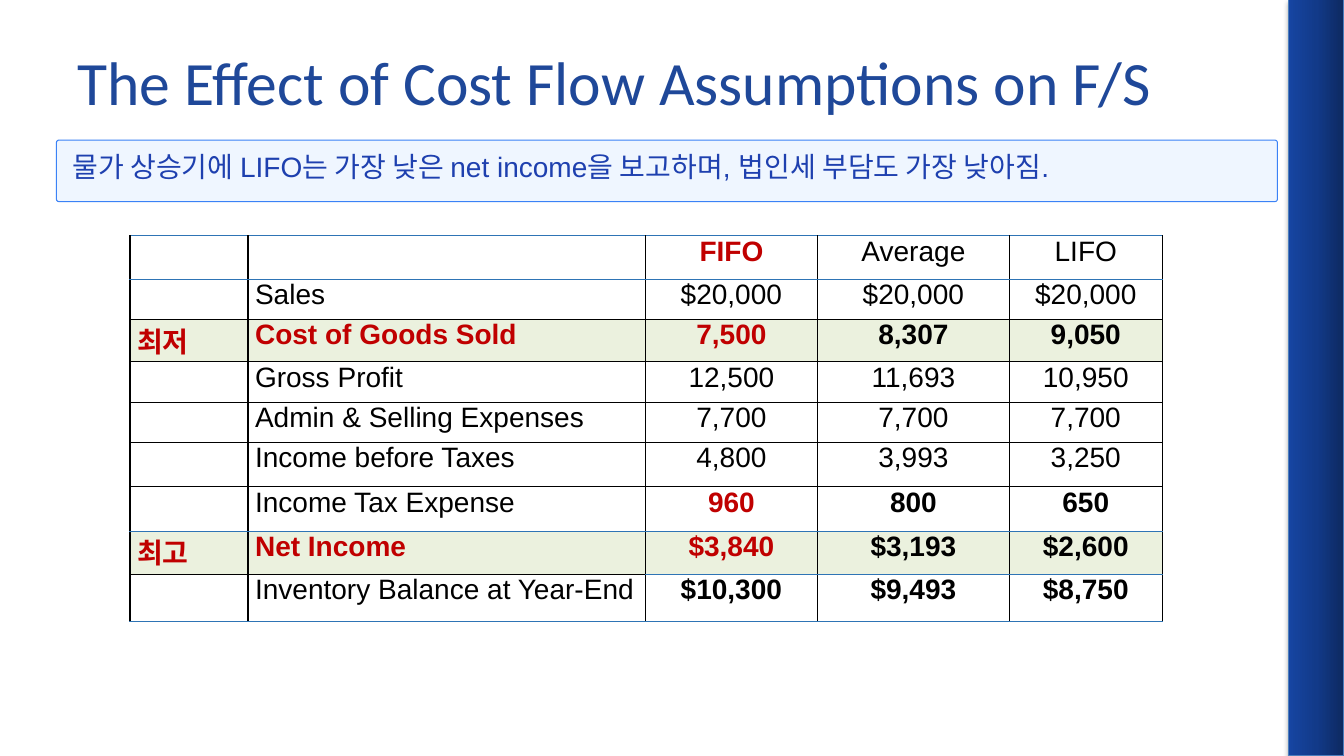
import dataclasses

import lxml.etree
import copy
import pptx
import pptx.dml.color
import pptx.enum.shapes
import pptx.enum.text
import pptx.oxml
import pptx.oxml.ns
import pptx.util

EMU_PER_PX = 9144


@dataclasses.dataclass(frozen=True)
class Theme:
    title_font: str = "Calibri"
    body_font: str = "Arial"
    title_size: int = 44
    body_size: int = 20
    title: str = "1F4899"
    note: str = "1E40AF"
    note_fill: str = "EFF6FF"
    note_line: str = "3B82F6"
    band_stops: tuple = ("0D2960", "123A89", "1645A2")
    band_line: str = "4B7EBC"
    text: str = "000000"
    emphasis: str = "C00000"
    highlight: str = "EBF1DE"
    grid: str = "000000"
    rule: str = "2E74B5"


@dataclasses.dataclass(frozen=True)
class Row:
    height: int
    texts: tuple
    bold: range = range(0)
    red: range = range(0)
    highlighted: bool = False


COLUMN_WIDTHS = (117, 394, 171, 190, 152)
AMOUNTS = range(2, 5)
FIFO = range(2, 3)
ROWS = (
    Row(43, ("", "", "FIFO", "Average", "LIFO"), FIFO, FIFO),
    Row(40, ("", "Sales", "$20,000", "$20,000", "$20,000")),
    Row(42, ("최저", "Cost of Goods Sold", "7,500", "8,307", "9,050"), range(5), range(3), True),
    Row(40, ("", "Gross Profit", "12,500", "11,693", "10,950")),
    Row(40, ("", "Admin & Selling Expenses", "7,700", "7,700", "7,700")),
    Row(44, ("", "Income before Taxes", "4,800", "3,993", "3,250")),
    Row(44, ("", "Income Tax Expense", "960", "800", "650"), AMOUNTS, FIFO),
    Row(43, ("최고", "Net Income", "$3,840", "$3,193", "$2,600"), range(5), range(3), True),
    Row(47, ("", "Inventory Balance at Year-End", "$10,300", "$9,493", "$8,750"), AMOUNTS),
)
BLUE_EDGES = (0, 1, 7, 9)
NET_INCOME_EDGE = 8


def px(length):
    return pptx.util.Emu(length * EMU_PER_PX)


def rgb(color):
    return pptx.dml.color.RGBColor.from_string(color)


class SlideBuilder:
    def __init__(self, slide, theme):
        self.slide = slide
        self.theme = theme

    def format_runs(self, paragraph, font, size, color, bold=False):
        for run in paragraph.runs:
            run.font.name = font
            run.font.size = pptx.util.Pt(size)
            run.font.color.rgb = rgb(color)
            run.font.bold = bold

    def shape(self, kind, left, top, width, height, line):
        shape = self.slide.shapes.add_shape(kind, px(left), px(top), px(width), px(height))
        shape.shadow.inherit = False
        shape.line.color.rgb = rgb(line)
        shape.line.width = pptx.util.Pt(0.75)
        return shape

    def side_band(self, left, top, width, height):
        band = self.shape(pptx.enum.shapes.MSO_SHAPE.RECTANGLE, left, top, width, height, self.theme.band_line)
        band.fill.gradient()
        band.fill.gradient_angle = 180
        properties = band.element.spPr
        stops = properties.find(".//" + pptx.oxml.ns.qn("a:gsLst"))
        stops.insert(1, copy.deepcopy(stops[0]))
        for index, color in enumerate(self.theme.band_stops):
            stop = band.fill.gradient_stops[index]
            stop.color.rgb = rgb(color)
            stop.position = index / 2
        effects = properties.find(pptx.oxml.ns.qn("a:effectLst"))
        effects.append(pptx.oxml.parse_xml(
            f'<a:outerShdw {pptx.oxml.ns.nsdecls("a")} blurRad="40000" dist="23000" dir="5400000" '
            'rotWithShape="0"><a:srgbClr val="000000"><a:alpha val="35000"/></a:srgbClr></a:outerShdw>'))

    def note_box(self, left, top, width, height):
        box = self.shape(pptx.enum.shapes.MSO_SHAPE.ROUNDED_RECTANGLE, left, top, width, height,
                         self.theme.note_line)
        box.adjustments[0] = 0.04
        box.fill.solid()
        box.fill.fore_color.rgb = rgb(self.theme.note_fill)

    def text(self, text, left, top, width, height, font, size, color):
        box = self.slide.shapes.add_textbox(px(left), px(top), px(width), px(height))
        frame = box.text_frame
        frame.word_wrap = True
        frame.text = text
        self.format_runs(frame.paragraphs[0], font, size, color)
        return frame

    def title(self, text, left, top, width, height):
        frame = self.text(text, left, top, width, height,
                          self.theme.title_font, self.theme.title_size, self.theme.title)
        frame.vertical_anchor = pptx.enum.text.MSO_ANCHOR.MIDDLE

    def note(self, text, left, top, width, height):
        frame = self.text(text, left, top, width, height,
                          self.theme.body_font, self.theme.body_size, self.theme.note)
        frame.margin_left = frame.margin_top = frame.margin_right = frame.margin_bottom = 0
        frame.paragraphs[0].line_spacing = pptx.util.Pt(22.4)
        frame.paragraphs[0].space_after = pptx.util.Pt(8)

    def horizontal_edge(self, edge, column):
        if edge == NET_INCOME_EDGE and column in AMOUNTS:
            return self.theme.rule, 1.5
        return (self.theme.rule if edge in BLUE_EDGES else self.theme.grid), 1

    def borders(self, cell, row, column):
        side = (self.theme.grid, 1)
        edges = {"lnL": side, "lnR": side, "lnT": self.horizontal_edge(row, column),
                 "lnB": self.horizontal_edge(row + 1, column)}
        properties = cell._tc.get_or_add_tcPr()
        for tag, (color, width) in edges.items():
            line = lxml.etree.SubElement(properties, pptx.oxml.ns.qn(f"a:{tag}"), w=str(pptx.util.Pt(width)))
            fill = lxml.etree.SubElement(line, pptx.oxml.ns.qn("a:solidFill"))
            lxml.etree.SubElement(fill, pptx.oxml.ns.qn("a:srgbClr"), val=color)

    def cell(self, cell, row, row_index, column):
        self.borders(cell, row_index, column)
        if row.highlighted:
            cell.fill.solid()
            cell.fill.fore_color.rgb = rgb(self.theme.highlight)
        else:
            cell.fill.background()
        cell.margin_left = cell.margin_right = px(7)
        cell.margin_top = cell.margin_bottom = 0
        cell.text_frame.text = row.texts[column]
        paragraph = cell.text_frame.paragraphs[0]
        if column in AMOUNTS:
            paragraph.alignment = pptx.enum.text.PP_ALIGN.CENTER
        color = self.theme.emphasis if column in row.red else self.theme.text
        self.format_runs(paragraph, self.theme.body_font, self.theme.body_size, color, column in row.bold)

    def table(self, rows, widths, left, top):
        height = sum(row.height for row in rows)
        table = self.slide.shapes.add_table(
            len(rows), len(widths), px(left), px(top), px(sum(widths)), px(height)).table
        table.first_row = table.horz_banding = False
        for column, width in enumerate(widths):
            table.columns[column].width = px(width)
        for row_index, row in enumerate(rows):
            table.rows[row_index].height = px(row.height)
            for column in range(len(widths)):
                self.cell(table.cell(row_index, column), row, row_index, column)


def main():
    presentation = pptx.Presentation()
    presentation.slide_width = px(1333)
    presentation.slide_height = px(750)
    slide = presentation.slides.add_slide(presentation.slide_layouts[6])
    builder = SlideBuilder(slide, Theme())
    builder.side_band(1278, 0, 55, 750)
    builder.title("The Effect of Cost Flow Assumptions on F/S", 67, 18, 1200, 125)
    builder.note_box(56, 139, 1211, 61)
    builder.note("물가 상승기에 LIFO는 가장 낮은 net income을 보고하며, 법인세 부담도 가장 낮아짐.",
                 72, 151, 1186, 53)
    builder.table(ROWS, COLUMN_WIDTHS, 129, 234)
    presentation.save("out.pptx")


if __name__ == "__main__":
    main()
